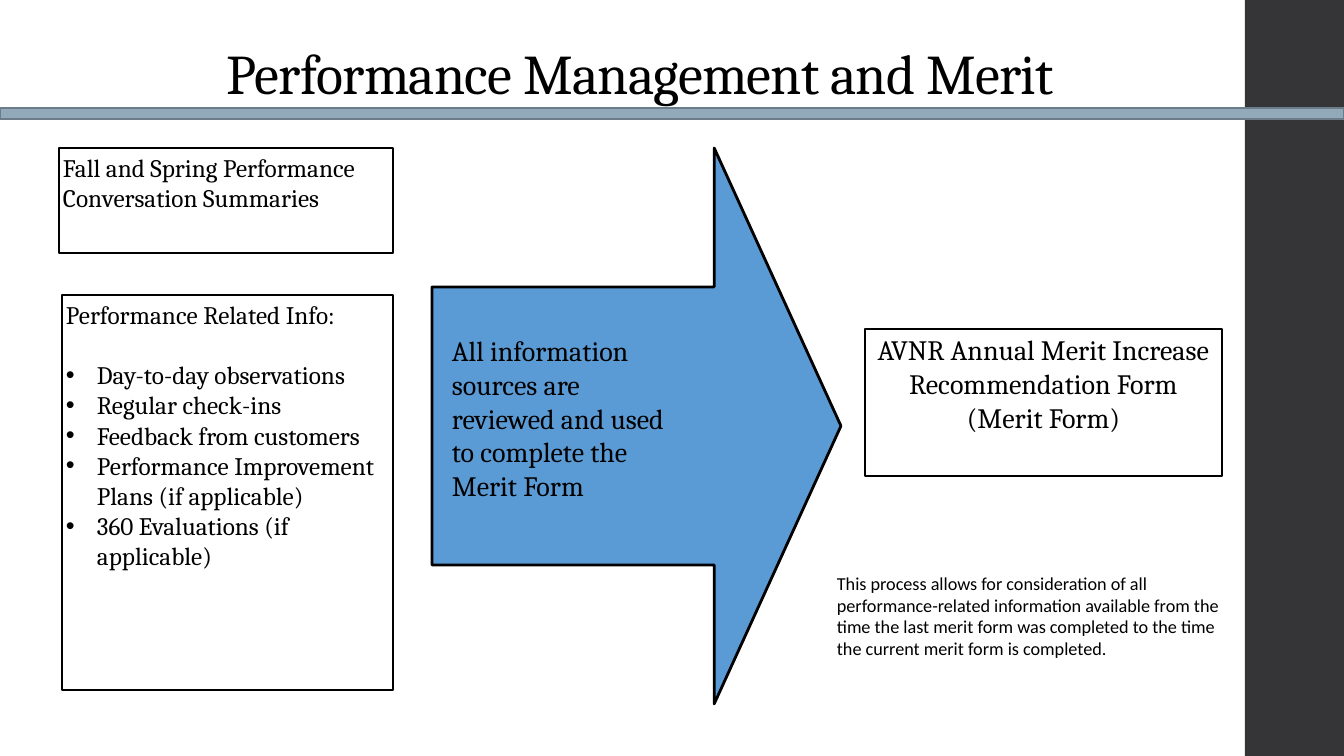
from lxml import etree
from pptx import Presentation
from pptx.dml.color import RGBColor
from pptx.enum.shapes import MSO_SHAPE as Shape
from pptx.enum.text import MSO_ANCHOR as Anchor, MSO_AUTO_SIZE as AutoSize, PP_ALIGN as Align
from pptx.oxml.ns import qn
from pptx.util import Emu, Pt

PX = 914400 / 100.8
WIDTH, HEIGHT = 1344, 756
COLORS = {
    "black": "000000",
    "sidebar": "353537",
    "arrow": "5B9BD5",
    "rule": "92A9B9",
    "rule_edge": "6C7D89",
}


def px(length):
    return Emu(round(length * PX))


def color(name):
    return RGBColor.from_string(COLORS[name])


def add_block(slide, box, kind=Shape.RECTANGLE, fill=None, line=None, line_width=1):
    shape = slide.shapes.add_shape(kind, *map(px, box))
    shape.shadow.inherit = False
    if fill:
        shape.fill.solid()
        shape.fill.fore_color.rgb = color(fill)
    else:
        shape.fill.background()
    if line:
        shape.line.color.rgb = color(line)
        shape.line.width = Pt(line_width)
    else:
        shape.line.fill.background()
    return shape


def set_bullet(paragraph, indent):
    properties = paragraph._p.get_or_add_pPr()
    properties.set("marL", str(px(indent)))
    properties.set("indent", str(-px(indent)))
    font = etree.SubElement(properties, qn("a:buFont"))
    font.set("typeface", "Arial")
    etree.SubElement(properties, qn("a:buChar")).set("char", "•")


def add_text(frame, text, size, font="Cambria", align=Align.LEFT, bullet_indent=0,
             space_after=0, line_spacing=None, tracking=0):
    """Write text as the next paragraph of the frame."""
    paragraph = frame.paragraphs[0]
    if paragraph.runs:
        paragraph = frame.add_paragraph()
    paragraph.alignment = align
    paragraph.space_after = Pt(space_after)
    if line_spacing:
        paragraph.line_spacing = line_spacing
    if bullet_indent:
        set_bullet(paragraph, bullet_indent)
    run = paragraph.add_run()
    run.text = text
    run.font.name = font
    run.font.size = Pt(size)
    run.font.color.rgb = color("black")
    if tracking:
        run._r.get_or_add_rPr().set("spc", str(round(tracking * 100)))


def outlined_frame(slide, box):
    frame = add_block(slide, box, line="black").text_frame
    frame.word_wrap = True
    frame.vertical_anchor = Anchor.TOP
    frame.margin_left = frame.margin_right = px(4)
    frame.margin_top = frame.margin_bottom = px(4)
    return frame


def plain_frame(slide, box, grow=True):
    frame = slide.shapes.add_textbox(*map(px, box)).text_frame
    frame.word_wrap = True
    if grow:
        frame.auto_size = AutoSize.SHAPE_TO_FIT_TEXT
    return frame


def draw_sources(slide, box):
    left, top, width, height = box
    # Conversation summaries
    summaries = outlined_frame(slide, (left, top, width, 105))
    add_text(summaries, "Fall and Spring Performance Conversation Summaries", 18)

    # Related information
    related = outlined_frame(slide, (left + 3, top + 147, width - 3, height - 147))
    add_text(related, "Performance Related Info:", 18, space_after=21.5)
    for item in (
        "Day-to-day observations",
        "Regular check-ins",
        "Feedback from customers",
        "Performance Improvement Plans (if applicable)",
        "360 Evaluations (if applicable)",
    ):
        add_text(related, item, 18, bullet_indent=31)


def draw_review_arrow(slide, box):
    left, top, width, height = box
    arrow = add_block(slide, box, Shape.RIGHT_ARROW, "arrow", "black", 2)
    arrow.adjustments[0] = 0.5
    arrow.adjustments[1] = 0.31
    frame = plain_frame(slide, (left + 10, top + 181, 255, 179))
    add_text(frame, "All information sources are reviewed and used to complete the Merit Form", 20)


def draw_result(slide, box):
    left, top, width, height = box
    # Merit form
    form = outlined_frame(slide, (left + 38, top, 357, 147))
    for line in ("AVNR Annual Merit Increase", "Recommendation Form", "(Merit Form)"):
        add_text(form, line, 20, align=Align.CENTER)

    # Explanation
    note = plain_frame(slide, (left, top + height - 99, width, 99))
    add_text(note, "This process allows for consideration of all performance-related information "
             "available from the time the last merit form was completed to the time the "
             "current merit form is completed.", 13, font="Calibri")


def draw_heading(slide, box):
    left, top, width, height = box
    add_block(slide, (0, top + height - 4, WIDTH, 11), fill="rule", line="rule_edge", line_width=1.1)
    frame = plain_frame(slide, box, grow=False)
    frame.vertical_anchor = Anchor.BOTTOM
    add_text(frame, "Performance Management and Merit", 40, align=Align.CENTER,
             line_spacing=0.9, tracking=-0.5)


def main():
    presentation = Presentation()
    presentation.slide_width, presentation.slide_height = px(WIDTH), px(HEIGHT)
    slide = presentation.slides.add_slide(presentation.slide_layouts[6])

    # Sidebar
    add_block(slide, (1245, 0, WIDTH - 1245, HEIGHT), fill="sidebar")

    draw_sources(slide, (59, 148, 334, 542))
    draw_review_arrow(slide, (432, 148, 409, 556))
    draw_result(slide, (827, 329, 411, 337))
    draw_heading(slide, (59, 3, 1163, 109))
    presentation.save("out.pptx")


if __name__ == "__main__":
    main()
